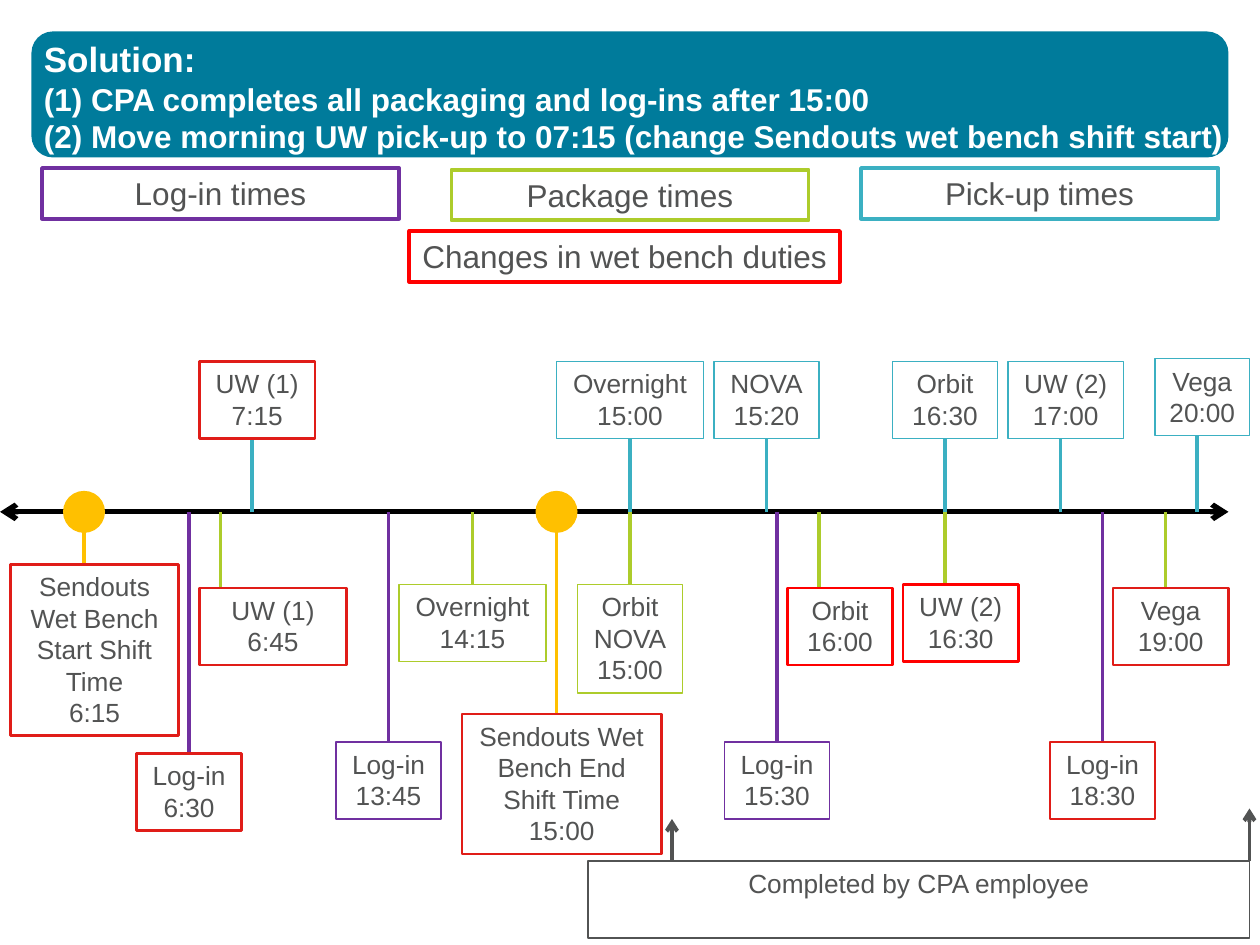
from pptx import Presentation
from pptx.dml.color import RGBColor
from pptx.enum.shapes import MSO_CONNECTOR, MSO_SHAPE
from pptx.enum.text import MSO_ANCHOR, PP_ALIGN
from pptx.oxml.ns import qn
from pptx.util import Pt
from lxml.etree import SubElement

TEAL = RGBColor(0x00, 0x7B, 0x9B)
AQUA = RGBColor(0x3B, 0xB0, 0xC2)
LIME = RGBColor(0xAD, 0xCC, 0x2B)
PURPLE = RGBColor(0x70, 0x30, 0xA0)
RED = RGBColor(0xFF, 0x00, 0x00)
BRICK = RGBColor(0xE0, 0x1D, 0x18)
AMBER = RGBColor(0xFF, 0xC0, 0x00)
GRAY = RGBColor(0x52, 0x53, 0x53)
BLACK = RGBColor(0x00, 0x00, 0x00)
WHITE = RGBColor(0xFF, 0xFF, 0xFF)

AXIS_Y = 292.5

TITLE = [
    ("Solution:", 20),
    ("(1) CPA completes all packaging and log-ins after 15:00", 18),
    ("(2) Move morning UW pick-up to 07:15 (change Sendouts wet bench shift start)", 18),
]

# text, left, top, width, colour
LEGEND = [
    ("Log-in times", 24, 96, 204, PURPLE),
    ("Package times", 258, 97, 204, LIME),
    ("Pick-up times", 492, 96, 204, AQUA),
    ("Changes in wet bench duties", 234, 132, 246, RED),
]

# stem colour, then events: paragraphs, text rows, left, top, width, stem x,
# border colour of a changed duty (None: same as the stem)
EVENTS = [
    (AQUA, [
        (["UW (1)", "7:15"], 2, 114, 206.5, 66, 144, BRICK),
        (["Overnight", "15:00"], 2, 318, 206.5, 84, 360, None),
        (["NOVA", "15:20"], 2, 408, 206.5, 60, 438, None),
        (["Orbit", "16:30"], 2, 510, 206.5, 60, 540, None),
        (["UW (2)", "17:00"], 2, 576, 206.5, 66, 606, None),
        (["Vega", "20:00"], 2, 660, 205, 54, 684, None),
    ]),
    (LIME, [
        (["UW (1)", "6:45"], 2, 114, 336, 84, 126, BRICK),
        (["Overnight", "14:15"], 2, 228, 334, 84, 270, None),
        (["Orbit", "NOVA", "15:00"], 3, 330, 334, 60, 360, None),
        (["Orbit", "16:00"], 2, 450, 336, 60, 468, RED),
        (["UW (2)", "16:30"], 2, 516, 334, 66, 540, RED),
        (["Vega", "19:00"], 2, 636, 336, 66, 666, BRICK),
    ]),
    (PURPLE, [
        (["Log-in", "6:30"], 2, 78, 430.5, 60, 108, BRICK),
        (["Log-in", "13:45"], 2, 192, 424, 60, 222, None),
        (["Log-in", "15:30"], 2, 414, 424, 60, 444, None),
        (["Log-in", "18:30"], 2, 600, 424, 60, 630, BRICK),
    ]),
    (AMBER, [
        (["Sendouts", "Wet Bench Start Shift Time", "6:15"], 5, 6, 322.5, 96, 48, BRICK),
        (["Sendouts Wet Bench End Shift Time", "15:00"], 4, 264, 408, 114, 318, BRICK),
    ]),
]
SHIFT_MARKS = [48, 318]
CPA_ARROWS = [(384, 468), (714, 462)]  # x, tip y
CPA_TOP = 492

prs = Presentation()
prs.slide_width, prs.slide_height = Pt(720), Pt(540)
slide = prs.slides.add_slide(prs.slide_layouts[6])


def add_shape(kind, x, y, w, h, fill=None, line=None, weight=0.75):
    s = slide.shapes.add_shape(kind, Pt(x), Pt(y), Pt(w), Pt(h))
    s.shadow.inherit = False
    if fill is None:
        s.fill.background()
    else:
        s.fill.solid()
        s.fill.fore_color.rgb = fill
    if line is None:
        s.line.fill.background()
    else:
        s.line.color.rgb = line
        s.line.width = Pt(weight)
    return s


def add_box(lines, x, y, w, h, color, weight, size=15, fill=None):
    s = add_shape(MSO_SHAPE.RECTANGLE, x, y, w, h, fill, color, weight)
    tf = s.text_frame
    tf.word_wrap = True
    tf.vertical_anchor = MSO_ANCHOR.TOP
    tf.text = "\n".join(lines)
    for p in tf.paragraphs:
        p.alignment = PP_ALIGN.CENTER
        set_font(p, size, GRAY)


def set_font(p, size, color, bold=False):
    p.font.name = "Arial"
    p.font.size = Pt(size)
    p.font.bold = bold
    p.font.color.rgb = color


def add_line(x1, y1, x2, y2, color, weight=2.25, arrows=()):
    c = slide.shapes.add_connector(MSO_CONNECTOR.STRAIGHT, Pt(x1), Pt(y1), Pt(x2), Pt(y2))
    c.line.color.rgb = color
    c.line.width = Pt(weight)
    for end in arrows:
        SubElement(c.line._get_or_add_ln(), qn(f"a:{end}"), type="arrow")
    SubElement(c._element.spPr, qn("a:effectLst"))


# Title banner
banner = add_shape(MSO_SHAPE.ROUNDED_RECTANGLE, 18, 18, 684, 72, TEAL)
banner.adjustments[0] = 0.17
tf = slide.shapes.add_textbox(Pt(18), Pt(18), Pt(690), Pt(72)).text_frame
tf.word_wrap = True
tf.vertical_anchor = MSO_ANCHOR.TOP
tf.text = "\n".join(text for text, size in TITLE)
for p, (text, size) in zip(tf.paragraphs, TITLE):
    set_font(p, size, WHITE, bold=True)

# Legend
for text, x, y, w, color in LEGEND:
    add_box([text], x, y, w, 29, color, 2.25, size=18)

# Time axis with shift marks
add_line(0, AXIS_Y, 702, AXIS_Y, BLACK, 3, ("headEnd", "tailEnd"))
for x in SHIFT_MARKS:
    add_shape(MSO_SHAPE.OVAL, x - 12, AXIS_Y - 12, 24, 24, AMBER)

# Events: a stem from the axis to the near edge of each box
for color, events in EVENTS:
    for lines, rows, x, y, w, stem_x, changed in events:
        h = 8 + 18 * rows
        edge = y if y > AXIS_Y else y + h
        add_line(stem_x, edge, stem_x, AXIS_Y, color)
        add_box(lines, x, y, w, h, changed or color, 1.5 if changed else 0.75)

# Span handled by the CPA employee
add_box(["Completed by CPA employee"], 336, CPA_TOP, 378, 44, GRAY, 0.75, fill=WHITE)
for x, tip in CPA_ARROWS:
    add_line(x, tip, x, CPA_TOP, GRAY, arrows=("headEnd",))

prs.save("out.pptx")
